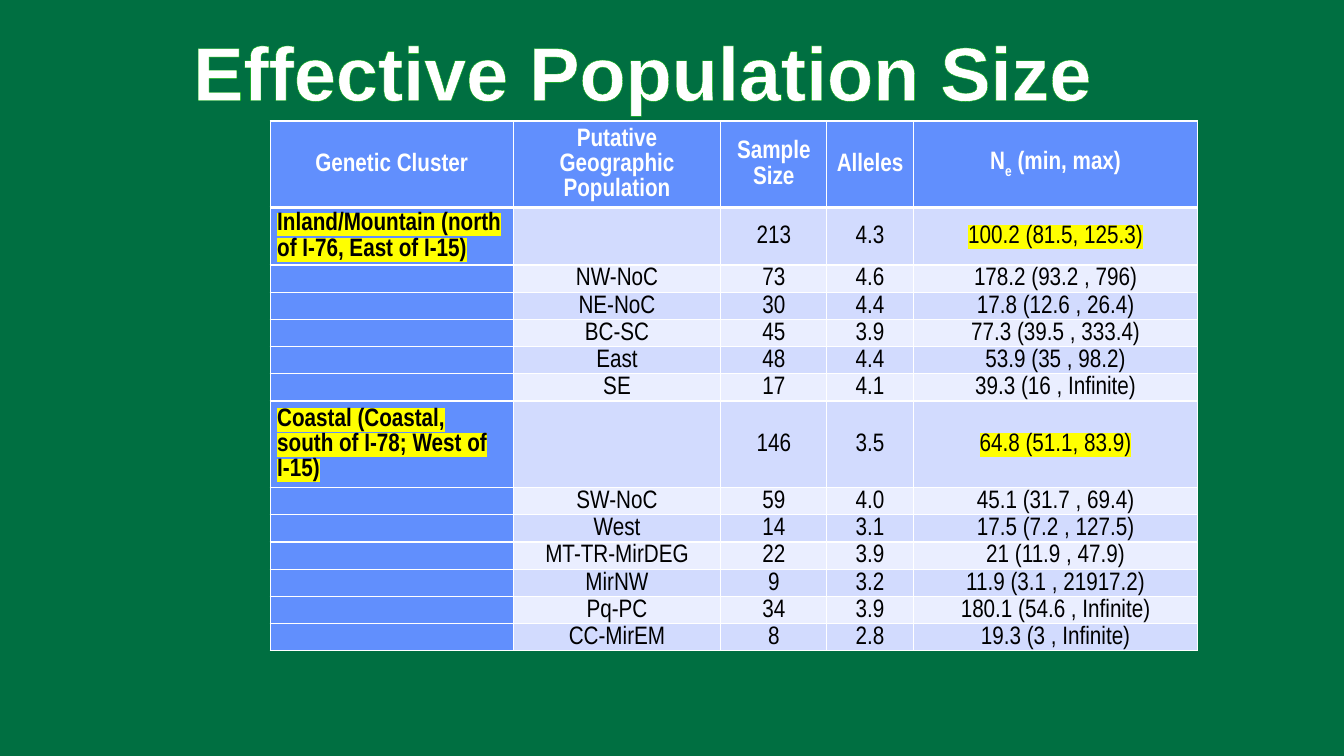
from lxml.etree import SubElement
from pptx import Presentation
from pptx.dml.color import RGBColor
from pptx.enum.text import MSO_ANCHOR, MSO_AUTO_SIZE, PP_ALIGN
from pptx.oxml.ns import qn
from pptx.util import Inches, Pt

WHITE, BLACK, BLUE, YELLOW = "FFFFFF", "000000", "618FFD", "FFFF00"
BANDS = ["EAEEFF", "D2DBFE"]
WIDTHS = [2.41, 2.06, 1.05, 0.86, 2.82]
TALL = {0: 0.86, 1: 0.57, 7: 0.86}
ROWS = [
    ["Genetic Cluster", "Putative Geographic Population", "Sample Size", "Alleles",
     ["N", "e", " (min, max)"]],
    ["Inland/Mountain (north of I-76, East of I-15)", "", "213", "4.3", "100.2 (81.5, 125.3)"],
    ["", "NW-NoC", "73", "4.6", "178.2 (93.2 , 796)"],
    ["", "NE-NoC", "30", "4.4", "17.8 (12.6 , 26.4)"],
    ["", "BC-SC", "45", "3.9", "77.3 (39.5 , 333.4)"],
    ["", "East", "48", "4.4", "53.9 (35 , 98.2)"],
    ["", "SE", "17", "4.1", "39.3 (16 , Infinite)"],
    ["Coastal (Coastal, south of I-78; West of I-15)", "", "146", "3.5", "64.8 (51.1, 83.9)"],
    ["", "SW-NoC", "59", "4.0", "45.1 (31.7 , 69.4)"],
    ["", "West", "14", "3.1", "17.5 (7.2 , 127.5)"],
    ["", "MT-TR-MirDEG", "22", "3.9", "21 (11.9 , 47.9)"],
    ["", "MirNW", "9", "3.2", "11.9 (3.1 , 21917.2)"],
    ["", "Pq-PC", "34", "3.9", "180.1 (54.6 , Infinite)"],
    ["", "CC-MirEM", "8", "2.8", "19.3 (3 , Infinite)"],
]


def color(code):
    return RGBColor.from_string(code)


def solid(parent, code):
    fill = SubElement(parent, qn("a:solidFill"))
    SubElement(fill, qn("a:srgbClr"), val=code)


def add_run(para, text, size, face, code, bold):
    run = para.add_run()
    run.text = text
    font = run.font
    font.size, font.name, font.bold = Pt(size), face, bold
    font.fill.solid()
    font.fill.fore_color.rgb = color(code)
    return run.font._element if hasattr(run.font, "_element") else run._r.get_or_add_rPr()


def mark(props):
    # The highlight sits right after the text fill
    light = SubElement(props, qn("a:highlight"))
    SubElement(light, qn("a:srgbClr"), val=YELLOW)
    props.find(qn("a:solidFill")).addnext(light)


def edge(cell, top, bottom):
    # Border lines come before the cell fill
    props = cell._tc.get_or_add_tcPr()
    sides = [("L", 1), ("R", 1), ("T", top), ("B", bottom)]
    for spot, (side, width) in enumerate(sides):
        line = SubElement(props, qn("a:ln" + side), w=str(Pt(width)))
        solid(line, WHITE)
        props.insert(spot, line)


def fill_cell(cell, row, col, text):
    head, first = row == 0, col == 0
    cell.fill.solid()
    cell.fill.fore_color.rgb = color(BLUE if head or first else BANDS[row % 2])
    edge(cell, 3 if row == 1 else 1, 3 if head else 1)
    cell.vertical_anchor = MSO_ANCHOR.MIDDLE
    cell.margin_left = cell.margin_right = Inches(0.07)
    cell.margin_top = cell.margin_bottom = 0
    para = cell.text_frame.paragraphs[0]
    if not text:
        # Keeps an empty cell from stretching its row
        SubElement(para._p, qn("a:endParaRPr"), sz="1200")
        return
    para.alignment = PP_ALIGN.LEFT if first and not head else PP_ALIGN.CENTER
    para.line_spacing = 1.07
    for part in text if isinstance(text, list) else [text]:
        props = add_run(para, part, 18, "Arial Narrow", WHITE if head else BLACK, head or first)
        if part == "e":
            props.set("baseline", "-25000")
        if row in (1, 7) and col in (0, 4):
            mark(props)


def add_grid(slide, left, top, width, height):
    frame = slide.shapes.add_table(len(ROWS), len(WIDTHS), Inches(left), Inches(top),
                                   Inches(width), Inches(height))
    table = frame.table
    table.first_row = table.horz_banding = False
    for col, size in enumerate(WIDTHS):
        table.columns[col].width = Inches(size)
    for row, texts in enumerate(ROWS):
        table.rows[row].height = Inches(TALL.get(row, 0.27))
        for col, text in enumerate(texts):
            fill_cell(table.cell(row, col), row, col, text)


def add_title(slide, left, top, width, height):
    box = slide.shapes.add_textbox(Inches(left), Inches(top), Inches(width), Inches(height))
    frame = box.text_frame
    frame.word_wrap = False
    frame.auto_size = MSO_AUTO_SIZE.SHAPE_TO_FIT_TEXT
    para = frame.paragraphs[0]
    para.alignment = PP_ALIGN.CENTER
    props = add_run(para, "Effective Population Size", 54, "Arial", WHITE, True)
    # Green outline around the letters
    line = SubElement(props, qn("a:ln"), w=str(Pt(1.75)))
    solid(line, "00AE00")
    props.insert(0, line)


def main():
    deck = Presentation()
    deck.slide_width, deck.slide_height = Inches(13.33), Inches(7.5)
    slide = deck.slides.add_slide(deck.slide_layouts[6])
    back = slide.background.fill
    back.solid()
    back.fore_color.rgb = color("006F41")
    add_grid(slide, 2.68, 1.2, sum(WIDTHS), 5.26)
    add_title(slide, 1.77, 0.2, 9.21, 1.01)
    deck.save("out.pptx")


if __name__ == "__main__":
    main()
